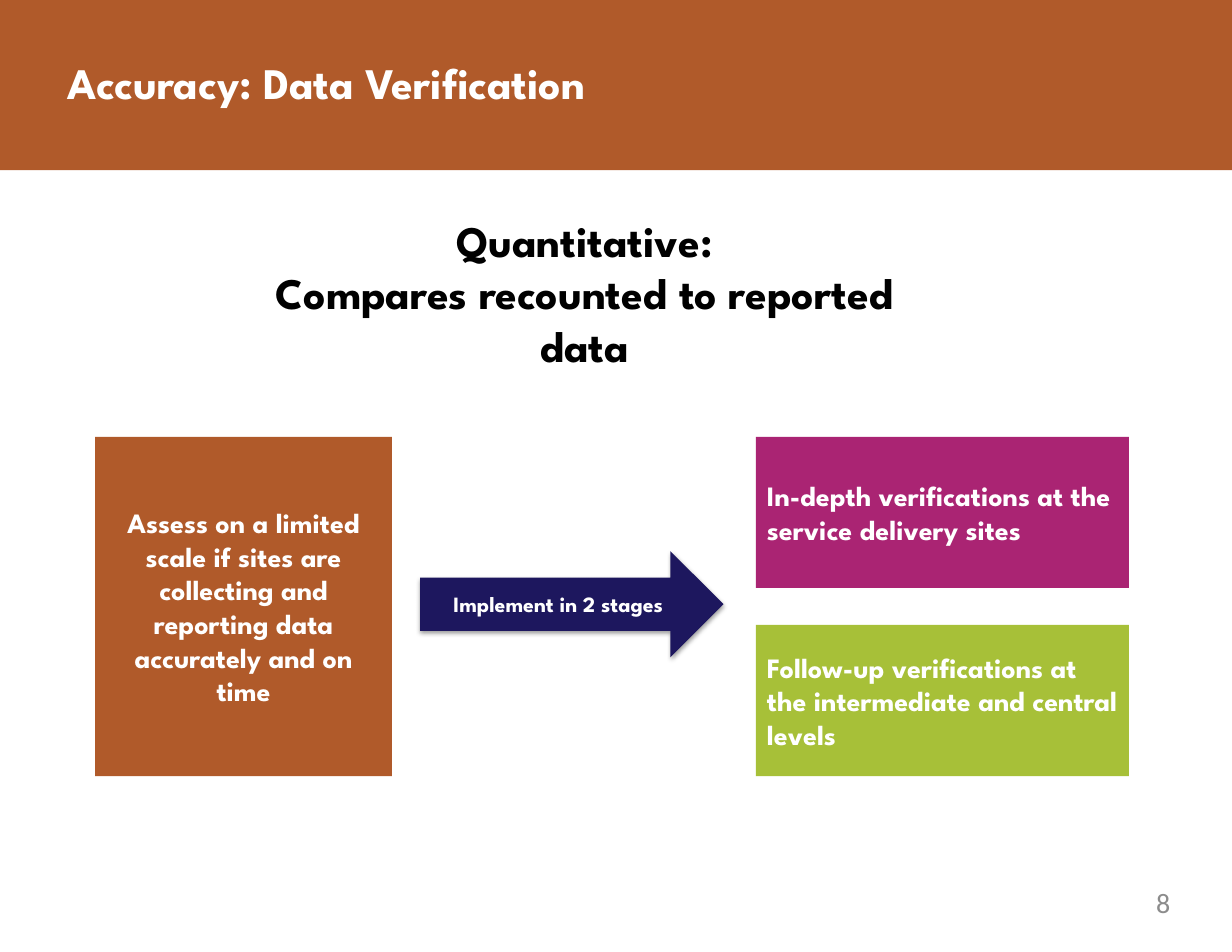
"""Builds the data verification slide: a title band and a two-stage process."""
import lxml.etree
import pptx
import pptx.dml.color
import pptx.enum.shapes
import pptx.enum.text
import pptx.oxml
import pptx.util

Inches = pptx.util.Inches
SHAPE = pptx.enum.shapes.MSO_SHAPE
ANCHOR = pptx.enum.text.MSO_ANCHOR
ALIGN = pptx.enum.text.PP_ALIGN

THEME = {
    "heading_font": "League Spartan", "number_font": "Calibri",
    "rust": "B05A2A", "navy": "1D175E", "magenta": "AA2473", "green": "A7C038",
    "white": "FFFFFF", "black": "000000", "grey": "8C8C8C",
    "heading_size": 28, "box_size": 18, "arrow_size": 14, "number_size": 18,
}


def write(holder, text, size, color, align, anchor=ANCHOR.TOP, inset=(0, 0), font="heading_font", bold=True):
    frame = holder.text_frame
    frame.text = text
    frame.word_wrap = True
    frame.auto_size = pptx.enum.text.MSO_AUTO_SIZE.NONE
    frame.vertical_anchor = anchor
    frame.margin_left = frame.margin_right = Inches(inset[0])
    frame.margin_top = frame.margin_bottom = Inches(inset[1])
    for paragraph in frame.paragraphs:
        paragraph.alignment = align
        for run in paragraph.runs:
            run.font.name = THEME[font]
            run.font.size = pptx.util.Pt(THEME[size])
            run.font.bold = bold
            run.font.color.rgb = pptx.dml.color.RGBColor.from_string(THEME[color])


def add_block(kind, place, color):
    block = slide.shapes.add_shape(kind, *map(Inches, place))
    block.shadow.inherit = False
    block.fill.solid()
    block.fill.fore_color.rgb = pptx.dml.color.RGBColor.from_string(THEME[color])
    block.line.fill.background()
    return block


deck = pptx.Presentation()
deck.slide_width, deck.slide_height = Inches(11), Inches(8.5)
slide = deck.slides.add_slide(deck.slide_layouts[5])

band = add_block(SHAPE.RECTANGLE, (0, 0, 11, 1.52), "rust")
slide.shapes.title._element.addprevious(band._element)

title = slide.shapes.title
title.left, title.top, title.width, title.height = map(Inches, (0.6, 0.5, 10.02, 0.47))
write(title, "Accuracy: Data Verification", "heading_size", "white", ALIGN.LEFT)

approach = slide.shapes.add_textbox(*map(Inches, (2.02, 1.85, 6.4, 1.53)))
write(approach, "Quantitative:\nCompares recounted to reported data", "heading_size", "black",
      ALIGN.CENTER, inset=(0.11, 0.06))

stages_arrow = add_block(SHAPE.RIGHT_ARROW, (3.75, 4.92, 2.71, 0.95), "navy")
write(stages_arrow, "Implement in 2 stages", "arrow_size", "white", ALIGN.CENTER, ANCHOR.MIDDLE, (0.11, 0.06))
effects = stages_arrow._element.spPr.find(pptx.oxml.ns.qn("a:effectLst"))
shadow = lxml.etree.SubElement(effects, pptx.oxml.ns.qn("a:outerShdw"), blurRad=str(pptx.util.Pt(3.1)),
                               dist=str(pptx.util.Pt(1.6)), dir="5400000", rotWithShape="0")
shade = lxml.etree.SubElement(shadow, pptx.oxml.ns.qn("a:srgbClr"), val=THEME["black"])
lxml.etree.SubElement(shade, pptx.oxml.ns.qn("a:alpha"), val="38000")

steps = [
    ("Assess on a limited scale if sites are collecting and reporting data accurately and on time",
     (0.85, 3.9, 2.65, 3.03), "rust", ALIGN.CENTER),
    ("In-depth verifications at the service delivery sites", (6.75, 3.9, 3.33, 1.35), "magenta", ALIGN.LEFT),
    ("Follow-up verifications at the intermediate and central levels",
     (6.75, 5.58, 3.33, 1.35), "green", ALIGN.LEFT),
]
for wording, place, color, align in steps:
    step = add_block(SHAPE.RECTANGLE, place, color)
    write(step, wording, "box_size", "white", align, ANCHOR.MIDDLE, (0.1, 0.05))

page_number = slide.shapes.add_textbox(*map(Inches, (7.92, 7.91, 2.53, 0.42)))
write(page_number, "8", "number_size", "grey", ALIGN.RIGHT, font="number_font", bold=False)

deck.save("out.pptx")
